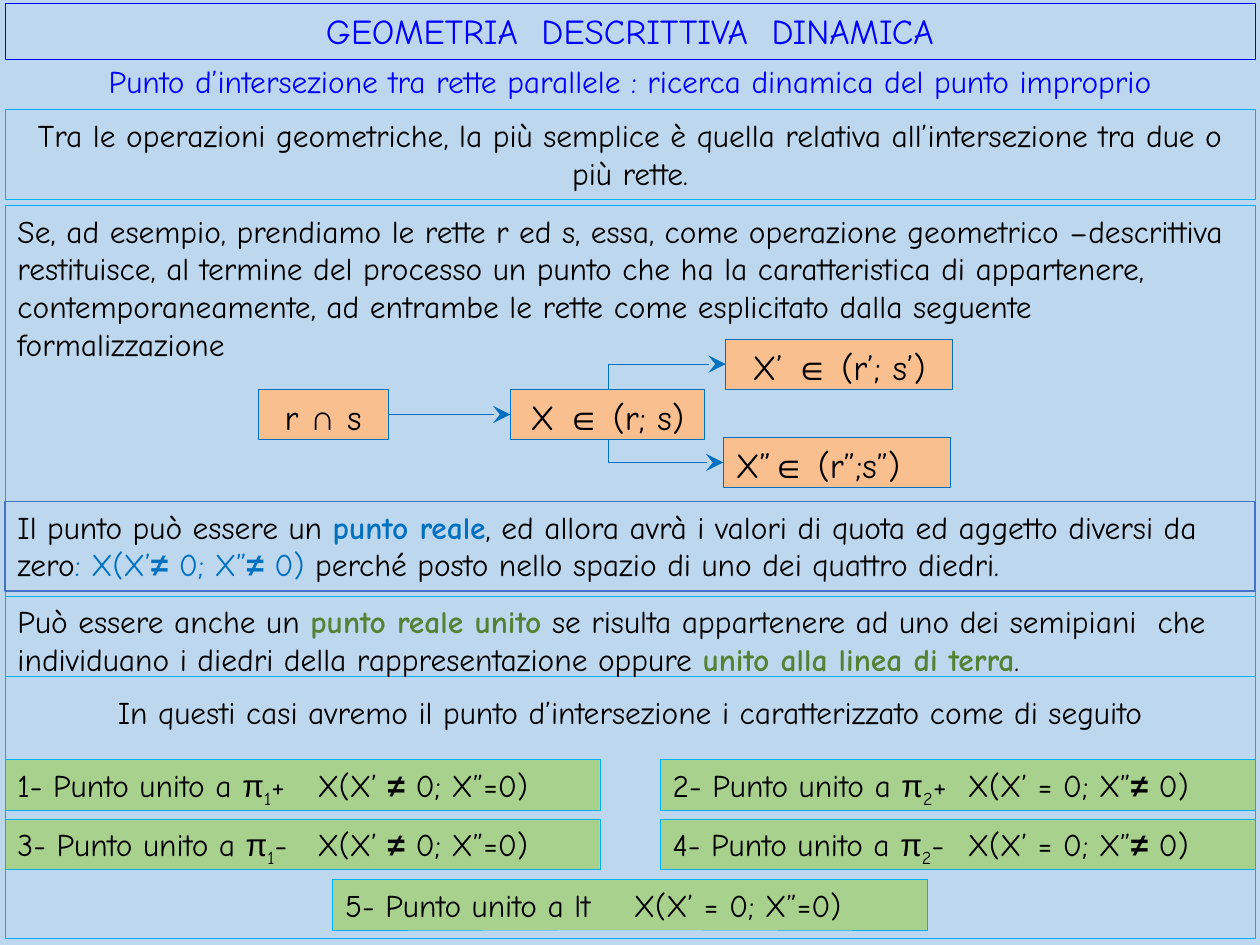
from dataclasses import dataclass
from itertools import groupby

import pptx
import pptx.dml.color
import pptx.enum.dml
import pptx.enum.shapes
import pptx.enum.text
import pptx.oxml.ns
import pptx.util
from lxml import etree
from pptx.util import Inches

SHAPE = pptx.enum.shapes.MSO_SHAPE
LINK = pptx.enum.shapes.MSO_CONNECTOR
ALIGN = pptx.enum.text.PP_ALIGN
qn = pptx.oxml.ns.qn


@dataclass(frozen=True)
class Theme:
    back: str = "BDD7EE"
    ink: str = "000000"
    title: str = "0000FF"
    frame: str = "00B0F0"
    real: str = "4472C4"
    blue: str = "0070C0"
    green: str = "548235"
    node: str = "FABF8F"
    case: str = "A9D18E"
    font: str = "Comic Neue"
    math: str = "Arial"
    body: int = 18
    large: int = 20
    thin: float = 0.25
    thick: float = 0.75


T = Theme()


def rgb(code):
    return pptx.dml.color.RGBColor.from_string(code)


def write(para, text, size=T.body, color=T.ink, bold=False, sub=False):
    """Add text to a paragraph; math signs take their own font."""
    for sign, part in groupby(text, lambda c: c in "∩∈π≠"):
        run = para.add_run()
        run.text = "".join(part)
        font = run.font
        font.name = T.math if sign else T.font
        font.size = pptx.util.Pt(size)
        font.bold = bold or run.text == "≠"
        font.color.rgb = rgb(color)
        if sub:
            run._r.get_or_add_rPr().set("baseline", "-25000")


def panel(slide, box, line=None, fill=None, width=T.thin, align=ALIGN.LEFT):
    """Place a text rectangle; return it with its paragraph."""
    shape = slide.shapes.add_shape(SHAPE.RECTANGLE, *map(Inches, box))
    shape.shadow.inherit = False
    if fill:
        shape.fill.solid()
        shape.fill.fore_color.rgb = rgb(fill)
    else:
        shape.fill.background()
    if line:
        shape.line.color.rgb = rgb(line)
        shape.line.width = pptx.util.Pt(width)
    else:
        shape.line.fill.background()
    frame = shape.text_frame
    frame.word_wrap = True
    frame.vertical_anchor = pptx.enum.text.MSO_ANCHOR.TOP
    para = frame.paragraphs[0]
    para.alignment = align
    return shape, para


def arrow(slide, kind, start, end):
    link = slide.shapes.add_connector(kind, *map(Inches, start + end))
    link.line.color.rgb = rgb(T.blue)
    link.line.width = pptx.util.Pt(T.thin)
    props = link._element.spPr
    etree.SubElement(props.find(qn("a:ln")), qn("a:tailEnd"),
                     type="stealth", w="lg", len="lg")
    etree.SubElement(props, qn("a:effectLst"))
    if kind == LINK.ELBOW:  # turn right at the start
        guides = props.find(qn("a:prstGeom")).get_or_add_avLst()
        etree.SubElement(guides, qn("a:gd"), name="adj1", fmla="val 0")
    return link


def header(slide, box):
    left, top, width, _ = box
    _, para = panel(slide, (left, top, width, 0.44), T.title,
                    align=ALIGN.CENTER)
    write(para, "GEOMETRIA  DESCRITTIVA  DINAMICA",
          size=T.large, color=T.title)
    _, para = panel(slide, (left, top + 0.41, width, 0.4),
                    align=ALIGN.CENTER)
    write(para, "Punto d’intersezione tra rette parallele : ricerca "
          "dinamica del punto improprio", color=T.title)


def prose(slide, box, runs, **look):
    _, para = panel(slide, box, **look)
    for text, style in runs:
        write(para, text, **style)


def flow(slide, box):
    left, top, _, _ = box
    high = 0.4

    def node(x, y, width, text, align=ALIGN.CENTER):
        shape, para = panel(slide, (left + x, top + y, width, high),
                            T.blue, T.node, align=align)
        write(para, text, size=T.large)
        return shape

    start = node(0, 0.4, 1.03, "r ∩ s")
    point = node(2, 0.4, 1.54, "X ∈ (r; s)")
    node(3.71, 0, 1.8, "X’ ∈ (r’; s’)")
    node(3.69, 0.78, 1.8, "X”∈ (r”;s”)", ALIGN.LEFT)

    # Arrows from the meeting of the lines to its projections
    mid = top + 0.6
    link = arrow(slide, LINK.STRAIGHT, (left + 1.03, mid), (left + 2, mid))
    link.begin_connect(start, 3)
    link.end_connect(point, 1)
    turn = left + 2.78
    arrow(slide, LINK.ELBOW, (turn, top + 0.4), (left + 3.71, top + 0.2))
    arrow(slide, LINK.ELBOW, (turn, top + 0.8), (left + 3.69, top + 0.98))


def case(slide, box, name, plane, sign, values, stop):
    _, para = panel(slide, box, T.frame, T.case)
    tabs = etree.SubElement(para._p.get_or_add_pPr(), qn("a:tabLst"))
    etree.SubElement(tabs, qn("a:tab"), pos=str(Inches(stop)), algn="l")
    write(para, name)
    if plane:
        write(para, plane, sub=True)
    write(para, f"{sign}\t{values}")


def cases(slide, box):
    left, top, width, _ = box
    wide, high, step = 4.72, 0.4, 0.47
    for i in range(4):
        row, col = divmod(i, 2)
        spot = (left + col * (width - wide), top + row * step, wide, high)
        values = "X(X’ = 0; X”≠ 0)" if col else "X(X’ ≠ 0; X”=0)"
        case(slide, spot, f"{i + 1}- Punto unito a π", str(col + 1),
             "-" if row else "+", values, 2.34 if col else 2.38)
    spot = (left + (width - wide) / 2, top + 0.95, wide, high)
    case(slide, spot, "5- Punto unito a lt", "", "", "X(X’ = 0; X”=0)", 2.29)


def main():
    deck = pptx.Presentation()
    deck.slide_width, deck.slide_height = Inches(10), Inches(7.5)
    slide = deck.slides.add_slide(deck.slide_layouts[6])
    slide.background.fill.solid()
    slide.background.fill.fore_color.rgb = rgb(T.back)
    left, width = 0.04, 9.92
    blue = {"color": T.blue}
    green = {"color": T.green, "bold": True}

    # Introduction
    prose(slide, (left, 0.87, width, 0.71), [
        ("Tra le operazioni geometriche, la più semplice è quella relativa "
         "all’intersezione tra due o più rette.", {}),
    ], line=T.frame, align=ALIGN.CENTER)

    # Example with its diagram
    prose(slide, (left, 1.63, width, 3.74), [
        ("Se, ad esempio, prendiamo le rette r ed s, essa, come operazione "
         "geometrico –descrittiva restituisce, al termine del processo un "
         "punto che ha la caratteristica di appartenere, contemporaneamente, "
         "ad entrambe le rette come esplicitato dalla seguente "
         "formalizzazione", {}),
    ], line=T.frame)
    flow(slide, (2.05, 2.69, 5.51, 1.18))

    # United point and its five cases
    prose(slide, (left, 4.73, width, 2.72), [
        ("Può essere anche un ", {}),
        ("punto reale unito", green),
        (" se risulta appartenere ad uno dei semipiani  che individuano i "
         "diedri della rappresentazione oppure ", {}),
        ("unito alla linea di terra", green),
        (".", {}),
    ], line=T.frame)
    prose(slide, (left, 5.45, width, 0.4), [
        ("In questi casi avremo il punto d’intersezione i caratterizzato "
         "come di seguito", {}),
    ], align=ALIGN.CENTER)
    cases(slide, (left, 6.03, width, 1.35))

    # Title and real point
    header(slide, (left, 0.03, width, 0.81))
    prose(slide, (left, 3.98, width, 0.71), [
        ("Il punto può essere un ", {}),
        ("punto reale", {"color": T.blue, "bold": True}),
        (", ed allora avrà i valori di quota ed aggetto diversi da zero", {}),
        (": X(X’≠ 0; X”≠ 0) ", blue),
        ("perché posto nello spazio di uno dei quattro diedri.", {}),
    ], line=T.real, width=T.thick)

    deck.save("out.pptx")


if __name__ == "__main__":
    main()
